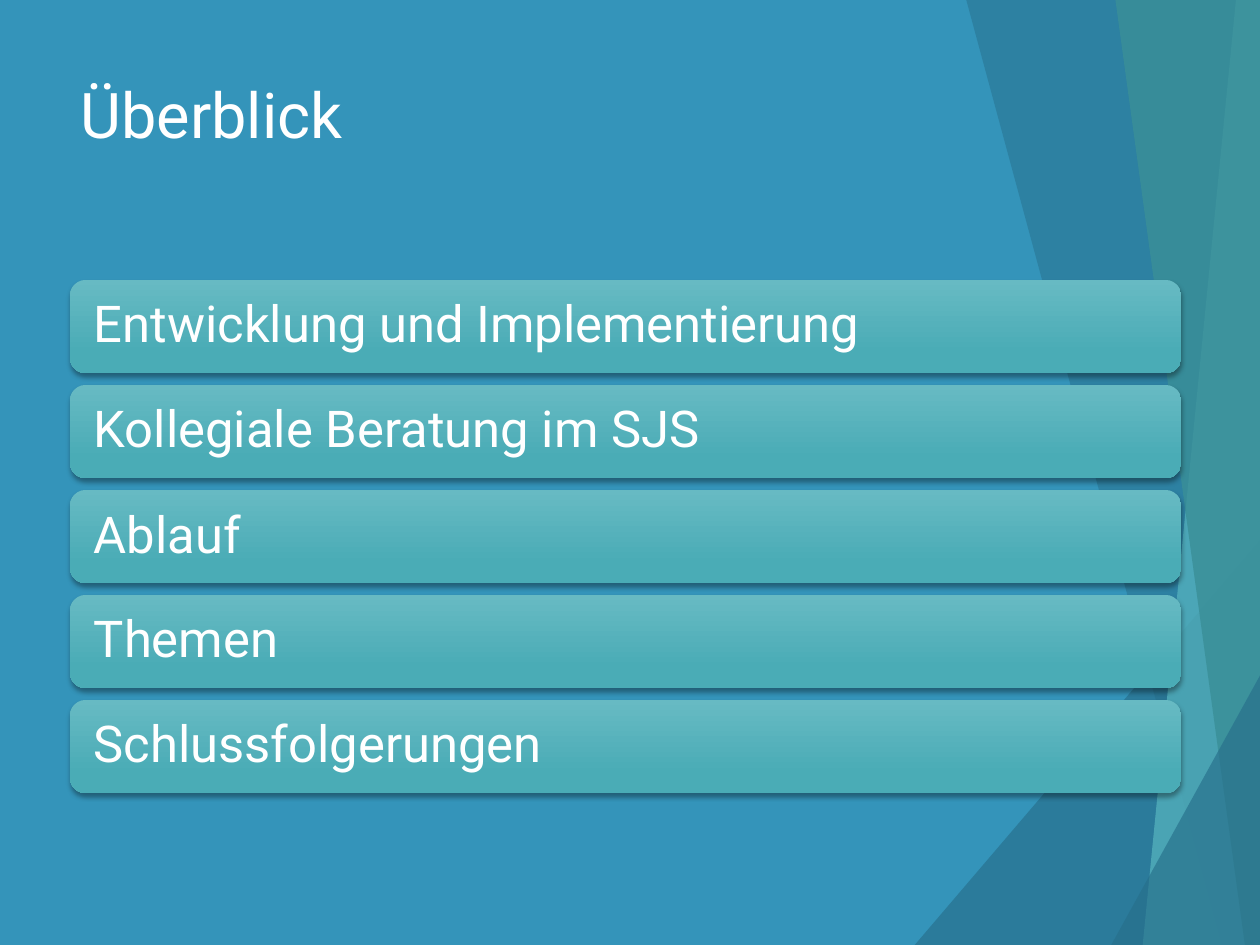
from lxml.etree import SubElement
from pptx import Presentation
from pptx.dml.color import RGBColor
from pptx.enum.shapes import MSO_CONNECTOR, MSO_SHAPE
from pptx.enum.text import MSO_ANCHOR, PP_ALIGN
from pptx.oxml.ns import qn
from pptx.util import Pt

WIDTH, HEIGHT = 720, 540
BLUE, DARK_BLUE, AQUA, TEAL = "3494BA", "276F8B", "58B6C0", "3A8F98"


def rgb(value):
    return RGBColor.from_string(value)


def set_alpha(parent, percent):
    for color in parent.iter(qn("a:srgbClr")):
        SubElement(color, qn("a:alpha"), val=str(percent * 1000))


def write(frame, text, size, font="Roboto", color="FFFFFF", inset=(7.2, 3.6),
          anchor=MSO_ANCHOR.TOP, spacing=1.0):
    frame.word_wrap = True
    frame.vertical_anchor = anchor
    frame.margin_left = frame.margin_right = Pt(inset[0])
    frame.margin_top = frame.margin_bottom = Pt(inset[1])
    paragraph = frame.paragraphs[0]
    paragraph.alignment = PP_ALIGN.LEFT
    paragraph.line_spacing = spacing
    run = paragraph.add_run()
    run.text = text
    run.font.size = Pt(size)
    run.font.name = font
    run.font.color.rgb = rgb(color)


class Deck:
    bar_gradient = ((0, "67BAC3"), (0.78, "4AACB6"))

    def __init__(self):
        self.presentation = Presentation()
        self.presentation.slide_width = Pt(WIDTH)
        self.presentation.slide_height = Pt(HEIGHT)
        self.slide = None

    def add_slide(self, background):
        self.slide = self.presentation.slides.add_slide(self.presentation.slide_layouts[6])
        fill = self.slide.background.fill
        fill.solid()
        fill.fore_color.rgb = rgb(background)

    def facet(self, points, color, alpha):
        start, *rest = [(Pt(x), Pt(y)) for x, y in points]
        builder = self.slide.shapes.build_freeform(*start)
        builder.add_line_segments(rest, close=True)
        facet = builder.convert_to_shape()
        facet.shadow.inherit = False
        facet.fill.solid()
        facet.fill.fore_color.rgb = rgb(color)
        set_alpha(facet.element.spPr, alpha)
        facet.line.fill.background()

    def ray(self, start, end, color, alpha):
        ray = self.slide.shapes.add_connector(
            MSO_CONNECTOR.STRAIGHT, *map(Pt, start), *map(Pt, end))
        ray.line.color.rgb = rgb(color)
        ray.line.width = Pt(0.75)
        properties = ray.line._get_or_add_ln().getparent()
        set_alpha(properties, alpha)
        SubElement(properties, qn("a:effectLst"))

    def title(self, text, left, top, width, height):
        title = self.slide.shapes.add_textbox(Pt(left), Pt(top), Pt(width), Pt(height))
        write(title.text_frame, text, size=36)

    def bar(self, text, left, top, width, height):
        bar = self.slide.shapes.add_shape(
            MSO_SHAPE.ROUNDED_RECTANGLE, Pt(left), Pt(top), Pt(width), Pt(height))
        bar.line.fill.background()
        bar.fill.gradient()
        bar.fill.gradient_angle = 270
        for stop, (position, color) in zip(bar.fill.gradient_stops, self.bar_gradient):
            stop.position = position
            stop.color.rgb = rgb(color)
        bar.shadow.inherit = False
        effects = bar.element.spPr.find(qn("a:effectLst"))
        shadow = SubElement(effects, qn("a:outerShdw"), blurRad=str(Pt(3)),
                            dist=str(Pt(2)), dir="5400000", rotWithShape="0")
        SubElement(shadow, qn("a:srgbClr"), val="000000")
        set_alpha(shadow, 35)
        write(bar.text_frame, text, size=29, inset=(11, 8.6),
              anchor=MSO_ANCHOR.MIDDLE, spacing=0.9)


def right_band(top_x, bottom_x):
    return [(top_x, 0), (bottom_x, HEIGHT), (WIDTH, HEIGHT), (WIDTH, 0)]


def right_corner(bottom_x, right_y):
    return [(bottom_x, HEIGHT), (WIDTH, right_y), (WIDTH, HEIGHT)]


def main():
    deck = Deck()
    deck.add_slide(BLUE)

    deck.facet([(0, 316), (35.3, HEIGHT), (0, HEIGHT)], BLUE, 70)
    deck.ray((404, HEIGHT), (WIDTH, 329), BLUE, 70)
    deck.ray((554.4, 0), (651, HEIGHT), BLUE, 70)
    facets = [
        (right_band(702, 543), BLUE, 36),
        (right_band(567.4, 661.7), BLUE, 20),
        (right_corner(522.7, 309), DARK_BLUE, 66),
        (right_band(552.2, 698.4), DARK_BLUE, 50),
        (right_band(706.3, 653), AQUA, 70),
        (right_band(637.4, 711.4), TEAL, 82),
        (right_corner(635, 386), DARK_BLUE, 66),
    ]
    for points, color, alpha in facets:
        deck.facet(points, color, alpha)

    deck.title("Überblick", 39, 39.6, 636.5, 130.3)
    topics = ["Entwicklung und Implementierung", "Kollegiale Beratung im SJS",
              "Ablauf", "Themen", "Schlussfolgerungen"]
    for index, topic in enumerate(topics):
        deck.bar(topic, 40, 160 + 60 * index, 635, 53.3)

    deck.presentation.save("out.pptx")


if __name__ == "__main__":
    main()
